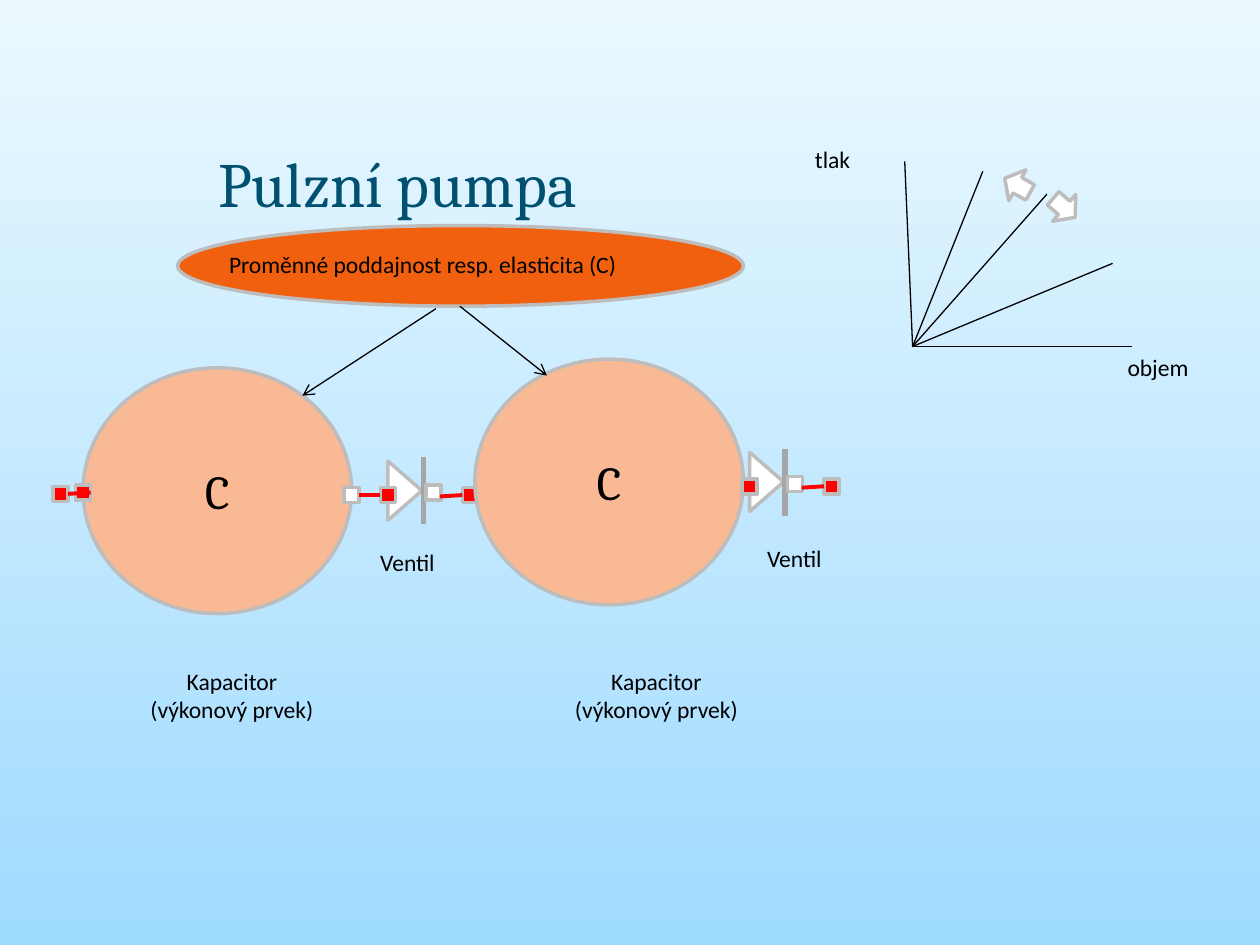
"""Build the slide on the pulse pump: two capacitors, two valves and a pressure-volume sketch."""
from lxml.etree import SubElement
from pptx import Presentation
from pptx.dml.color import RGBColor
from pptx.enum.shapes import MSO_CONNECTOR, MSO_SHAPE as Kind
from pptx.enum.text import MSO_ANCHOR as Anchor, MSO_AUTO_SIZE as AutoSize, PP_ALIGN as Align
from pptx.oxml.ns import qn
from pptx.util import Pt

COLORS = {
    "sky_top": "EBF9FF", "sky_bottom": "9FDAFF", "title": "005070", "text": "000000",
    "control": "F1600F", "capacitor": "F9B995", "outline": "BDBDBD", "bar": "A6A6A6",
    "flow": "FF0000", "open": "FFFFFF",
}
HEADING, BODY = "Cambria", "Calibri"
LEFT, RIGHT = 1, 3
NODE = 8.6


def color(name):
    return RGBColor.from_string(COLORS[name])


class PumpSlide:
    def __init__(self, deck):
        self.slide = deck.slides.add_slide(deck.slide_layouts[5])
        self.shapes = self.slide.shapes

    def backdrop(self):
        fill = self.slide.background.fill
        fill.gradient()
        fill.gradient_angle = 270
        for stop, name, position in zip(fill.gradient_stops, ("sky_top", "sky_bottom"), (0, 1)):
            stop.color.rgb = color(name)
            stop.position = position

    def set_text(self, frame, text, size, font, ink="text", align=Align.LEFT):
        frame.text = text
        for paragraph in frame.paragraphs:
            paragraph.alignment = align
            paragraph.font.size = Pt(size)
            paragraph.font.name = font
            paragraph.font.color.rgb = color(ink)

    def title(self, text, *box):
        heading = self.shapes.title
        heading.left, heading.top, heading.width, heading.height = map(Pt, box)
        heading.text_frame.vertical_anchor = Anchor.MIDDLE
        self.set_text(heading.text_frame, text, 36, HEADING, "title")

    def label(self, text, *box, align=Align.LEFT, wrap=False):
        frame = self.shapes.add_textbox(*map(Pt, box)).text_frame
        frame.word_wrap = wrap
        frame.auto_size = AutoSize.SHAPE_TO_FIT_TEXT
        self.set_text(frame, text, 13.5, BODY, align=align)

    def figure(self, kind, fill, *box, turn=0, parent=None):
        figure = (parent or self.shapes).add_shape(kind, *map(Pt, box))
        figure.shadow.inherit = False
        figure.fill.solid()
        figure.fill.fore_color.rgb = color(fill)
        figure.line.color.rgb = color("outline")
        figure.line.width = Pt(2)
        figure.rotation = turn
        return figure

    def line(self, start, end, ink="text", width=0.75, arrow=False, parent=None):
        line = (parent or self.shapes).add_connector(
            MSO_CONNECTOR.STRAIGHT, *map(Pt, (*start, *end)))
        line.line.color.rgb = color(ink)
        line.line.width = Pt(width)
        properties = line._element.spPr
        if arrow:
            SubElement(properties.find(qn("a:ln")), qn("a:tailEnd"), type="arrow")
        SubElement(properties, qn("a:effectLst"))
        return line

    def node(self, fill, x, y):
        return self.figure(Kind.RECTANGLE, fill, x, y, NODE, NODE)

    def flow(self, source, target, source_side=RIGHT, target_side=LEFT):
        pipe = self.line((0, 0), (0, 0), "flow", 2.25)
        pipe.begin_connect(source, source_side)
        pipe.end_connect(target, target_side)

    def capacitor(self, x, y):
        bulb = self.figure(Kind.OVAL, "capacitor", x, y, 153.4, 140.4)
        bulb.text_frame.vertical_anchor = Anchor.MIDDLE
        self.set_text(bulb.text_frame, "C", 27, HEADING, align=Align.CENTER)

    def valve(self, x, y):
        target = self.node("flow", x + 46.8, y + 17.2)
        symbol = self.shapes.add_group_shape().shapes
        self.figure(Kind.ISOSCELES_TRIANGLE, "open", x - 2.9, y + 9.3, 33.8, 19.4,
                    turn=90, parent=symbol)
        self.line((x + 24.5, y), (x + 24.5, y + 38.2), "bar", 3, parent=symbol)
        self.node("open", x + 25.9, y + 15.8)
        inlet = self.node("flow", x, y + 17.2)
        pipe = self.line((x + 34, y + 22.3), (x + 46.8, y + 21.5), "flow", 2.25)
        pipe.end_connect(target, LEFT)
        return inlet


def main():
    deck = Presentation()
    deck.slide_width, deck.slide_height = Pt(720), Pt(540)
    pump = PumpSlide(deck)
    pump.backdrop()
    pump.title("Pulzní pumpa", 117.4, 74.2, 485.3, 59.8)

    pump.figure(Kind.OVAL, "control", 101.5, 128.9, 323.3, 46.1)
    pump.label("Proměnné poddajnost resp. elasticita (C)", 123.8, 139, 265.7, 23.8, wrap=True)

    pump.capacitor(47.5, 210.2)
    outlet = pump.node("open", 196.6, 278.6)
    inlet = pump.node("flow", 43.2, 277.2)
    source = pump.node("flow", 30.2, 277.9)
    pump.flow(source, inlet, target_side=RIGHT)
    pump.flow(outlet, pump.valve(217.4, 261.4))
    pump.capacitor(271.4, 205.2)
    pump.valve(424.1, 256.4)

    for start, end in (((249.1, 176.4), (172.8, 226.1)), ((262.8, 175), (312.5, 214.6))):
        pump.line(start, end, arrow=True)
    for x, y in ((210.2, 309.6), (431.3, 307.4)):
        pump.label("Ventil", x, y, 46.1, 23.8)
    for x in (77.8, 320.4):
        pump.label("Kapacitor\n(výkonový prvek)", x, 377.3, 109.4, 40.3, align=Align.CENTER)

    origin = (521.5, 198)
    for end in ((646.6, 198), (517, 92.2), (561.6, 97.9), (598.3, 110.9), (635.8, 150.5)):
        pump.line(origin, end)
    pump.label("objem", 637.2, 198, 49.7, 23.8)
    pump.label("tlak", 458.6, 79.2, 35.3, 23.8)
    for x, y, turn in ((599.8, 108.7, 40.7), (573.1, 95.8, 209.1)):
        pump.figure(Kind.RIGHT_ARROW, "open", x, y, 16.6, 20.2, turn=turn)

    deck.save("out.pptx")


if __name__ == "__main__":
    main()
